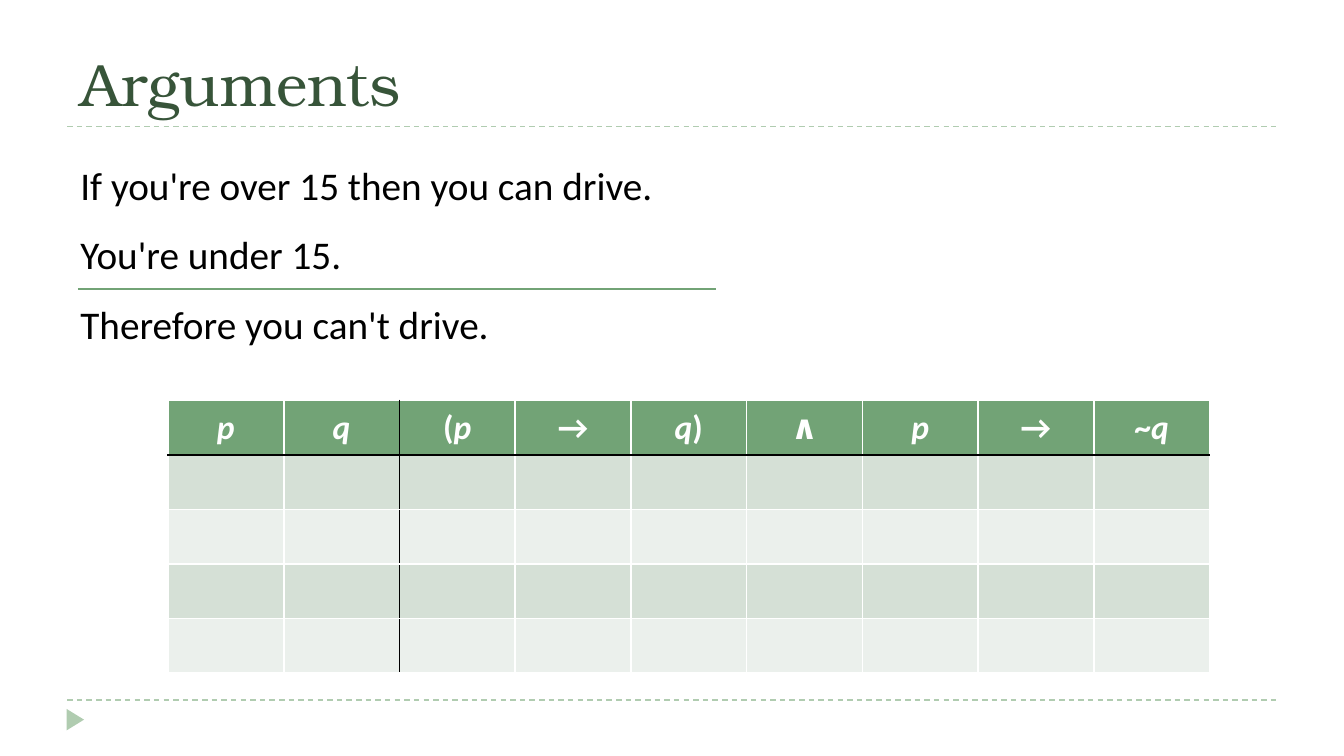
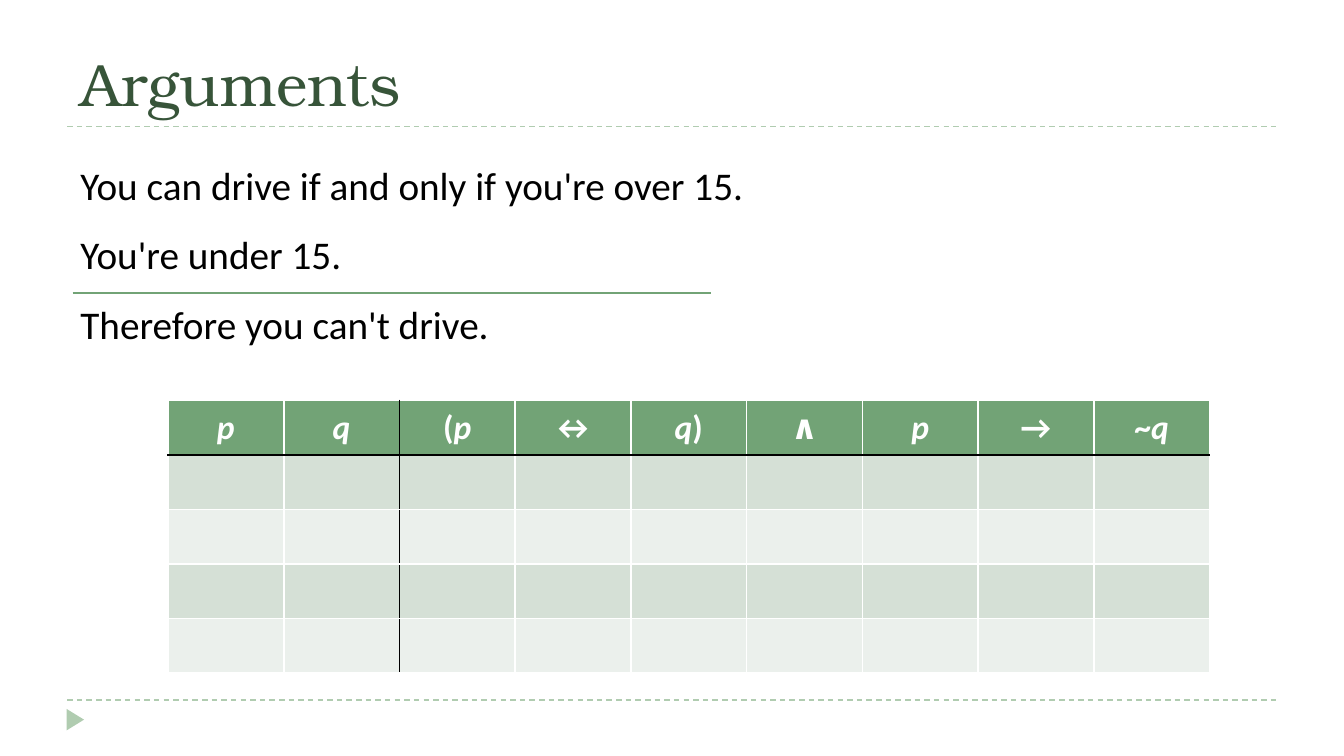
from lxml import etree
from pptx import Presentation
from pptx.dml.color import RGBColor
from pptx.enum.dml import MSO_LINE
from pptx.enum.shapes import MSO_CONNECTOR, MSO_SHAPE
from pptx.enum.text import MSO_ANCHOR, MSO_AUTO_SIZE, PP_ALIGN
from pptx.oxml.ns import qn
from pptx.util import Inches, Pt

STRAIGHT = MSO_CONNECTOR.STRAIGHT
DASH = MSO_LINE.DASH
TRIANGLE = MSO_SHAPE.ISOSCELES_TRIANGLE
LEFT, CENTER = PP_ALIGN.LEFT, PP_ALIGN.CENTER
BOTTOM = MSO_ANCHOR.BOTTOM
FIXED, GROW = MSO_AUTO_SIZE.NONE, MSO_AUTO_SIZE.SHAPE_TO_FIT_TEXT

TITLE_FONT, BODY_FONT = "TeX Gyre Bonum", "Calibri"
COLORS = {
    "title": "375439",
    "accent": "72A376",
    "band": "B0CCB0",
    "odd_row": "D5E0D6",
    "even_row": "EBF0EC",
    "white": "FFFFFF",
    "black": "000000",
}

ARGUMENTS = [
    {
        "title": "Arguments",
        "statements": [
            "If you're over 15 then you can drive.",
            "You're under 15.",
            "Therefore you can't drive.",
        ],
        "rule_start": (0.58, 2.15),
        "formula": ["p", "q", "(p", "→", "q)", "∧", "p", "→", "~q"],
    },
    {
        "title": "Arguments",
        "statements": [
            "You can drive if and only if you're over 15.",
            "You're under 15.",
            "Therefore you can't drive.",
        ],
        "rule_start": (0.54, 2.18),
        "formula": ["p", "q", "(p", "↔", "q)", "∧", "p", "→", "~q"],
    },
]

SLIDE_WIDTH = Inches(10)
SLIDE_HEIGHT = SLIDE_WIDTH * 9 // 16
VARIABLE_COUNT = 2
TRUTH_ROWS = 2 ** VARIABLE_COUNT
RULE_WIDTH = 4.75
BAND_LEFT, BAND_WIDTH = 0.5, 9
BAND_TOPS = (5.21, 0.94)


def rgb(name):
    return RGBColor.from_string(COLORS[name])


def add_run(paragraph, text, size, color, font=BODY_FONT, bold=False, italic=False):
    run = paragraph.add_run()
    run.text = text
    run.font.name = font
    run.font.size = Pt(size)
    run.font.bold = bold
    run.font.italic = italic
    run.font.color.rgb = rgb(color)


def add_rule(slide, left, top, width, color, dash=None):
    rule = slide.shapes.add_connector(
        STRAIGHT, Inches(left), Inches(top), Inches(left + width), Inches(top))
    rule.line.color.rgb = rgb(color)
    rule.line.width = Pt(0.75)
    if dash:
        rule.line.dash_style = dash
    etree.SubElement(rule._element.spPr, qn("a:effectLst"))


def add_frame(slide):
    for top in BAND_TOPS:
        add_rule(slide, BAND_LEFT, top, BAND_WIDTH, "band", DASH)
    marker = slide.shapes.add_shape(
        TRIANGLE, Inches(0.48), Inches(5.29), Inches(0.16), Inches(0.13))
    marker.rotation = 90
    marker.shadow.inherit = False
    marker.fill.solid()
    marker.fill.fore_color.rgb = rgb("band")
    marker.line.fill.background()


def set_title(slide, text):
    title = slide.shapes.title
    title.left, title.top = Inches(BAND_LEFT), Inches(0.12)
    title.width, title.height = Inches(BAND_WIDTH), Inches(0.81)
    frame = title.text_frame
    frame.auto_size = FIXED
    frame.vertical_anchor = BOTTOM
    paragraph = frame.paragraphs[0]
    paragraph.alignment = LEFT
    add_run(paragraph, text, 32, "title", TITLE_FONT)


def add_statements(slide, statements):
    frame = slide.shapes.add_textbox(
        Inches(0.5), Inches(1.15), Inches(6.17), Inches(1.5)).text_frame
    frame.word_wrap = True
    frame.auto_size = GROW
    for i, statement in enumerate(statements):
        paragraph = frame.add_paragraph() if i else frame.paragraphs[0]
        paragraph.space_after = Pt(12)
        add_run(paragraph, statement, 21, "black")


def set_borders(cell, black_sides):
    properties = cell._tc.get_or_add_tcPr()
    for side in "LRTB":
        border = etree.SubElement(properties, qn(f"a:ln{side}"), w=str(Pt(1)))
        fill = etree.SubElement(border, qn("a:solidFill"))
        color = COLORS["black" if side in black_sides else "white"]
        etree.SubElement(fill, qn("a:srgbClr"), val=color)


def add_truth_table(slide, formula):
    row_count = TRUTH_ROWS + 1
    table = slide.shapes.add_table(
        row_count, len(formula), Inches(1.25), Inches(2.98),
        Inches(7.75), Inches(2.03)).table
    for r in range(row_count):
        row_color = "accent" if r == 0 else "odd_row" if r % 2 else "even_row"
        for c in range(len(formula)):
            cell = table.cell(r, c)
            edges = {"B": r == 0, "T": r == 1,
                     "R": c == VARIABLE_COUNT - 1, "L": c == VARIABLE_COUNT}
            set_borders(cell, [side for side, black in edges.items() if black])
            cell.fill.solid()
            cell.fill.fore_color.rgb = rgb(row_color)
    for c, term in enumerate(formula):
        paragraph = table.cell(0, c).text_frame.paragraphs[0]
        paragraph.alignment = CENTER
        for symbol in term:
            add_run(paragraph, symbol, 18, "white", bold=True, italic=symbol.isalpha())


def main():
    deck = Presentation()
    deck.slide_width, deck.slide_height = SLIDE_WIDTH, SLIDE_HEIGHT
    title_only = deck.slide_layouts[5]
    for argument in ARGUMENTS:
        slide = deck.slides.add_slide(title_only)
        add_frame(slide)
        set_title(slide, argument["title"])
        add_statements(slide, argument["statements"])
        add_rule(slide, *argument["rule_start"], RULE_WIDTH, "accent")
        add_truth_table(slide, argument["formula"])
    deck.save("out.pptx")


if __name__ == "__main__":
    main()
